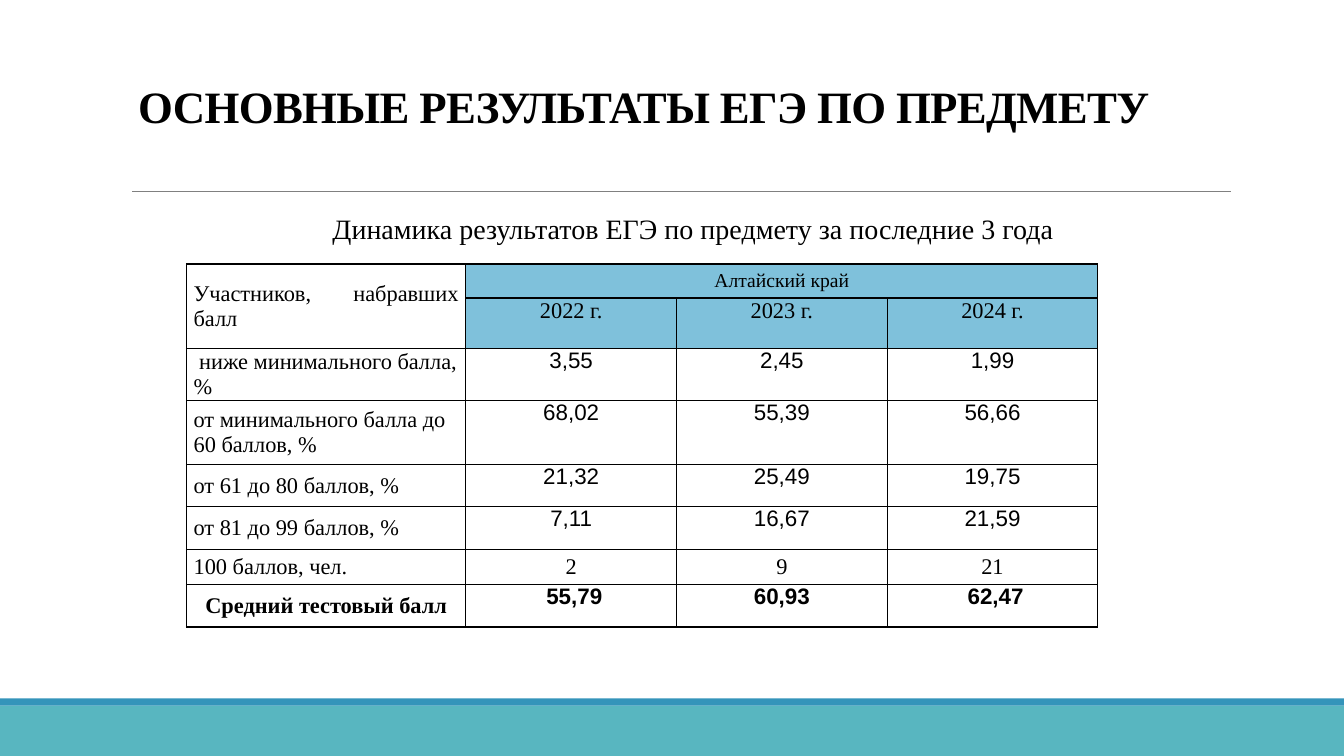
from dataclasses import dataclass

from lxml import etree
from pptx import Presentation
from pptx.dml.color import RGBColor
from pptx.enum.shapes import MSO_CONNECTOR, MSO_SHAPE
from pptx.enum.text import MSO_ANCHOR, MSO_AUTO_SIZE, PP_ALIGN
from pptx.oxml.ns import qn
from pptx.util import Cm, Pt

LEFT, MID, JUST = PP_ALIGN.LEFT, PP_ALIGN.CENTER, PP_ALIGN.JUSTIFY
TOP, CENTRE, BOTTOM = MSO_ANCHOR.TOP, MSO_ANCHOR.MIDDLE, MSO_ANCHOR.BOTTOM
RECT, LINE = MSO_SHAPE.RECTANGLE, MSO_CONNECTOR.STRAIGHT
SERIF, SANS = "Times New Roman", "Arial"
BLACK, WHITE, HEAD = "000000", "FFFFFF", "7FC1DB"
BLUE, TEAL, GREY = "3494BA", "58B6C0", "808080"
WIDE, HIGH = 33.87, 19.05


@dataclass
class Bar:
    top: float
    height: float
    fill: str


@dataclass
class Look:
    size: int = 16
    font: str = SERIF
    bold: bool = False
    align: PP_ALIGN = MID
    anchor: MSO_ANCHOR = CENTRE
    side: float = 0.18
    fill: str = ""


BARS = [Bar(17.78, 1.27, TEAL), Bar(17.6, 0.18, BLUE)]
COLS = [7.04, 5.31, 5.31, 5.31]
ROWS = [0.86, 1.27, 1.32, 1.6, 1.07, 1.07, 0.89, 1.07]
DATA = [
    ["Участников, набравших балл", "Алтайский край", "", ""],
    ["", "2022 г.", "2023 г.", "2024 г."],
    [" ниже минимального балла, %", "3,55", "2,45", "1,99"],
    ["от минимального балла до 60 баллов, %", "68,02", "55,39", "56,66"],
    ["от 61 до 80 баллов, %", "21,32", "25,49", "19,75"],
    ["от 81 до 99 баллов, %", "7,11", "16,67", "21,59"],
    ["100 баллов, чел.", "2", "9", "21"],
    ["Средний тестовый балл", " 55,79", "60,93", " 62,47"],
]
COUNT, MEAN = 6, 7


def rgb(code: str) -> RGBColor:
    return RGBColor.from_string(code)


def style(para, size: int, font: str = SERIF, bold: bool = False) -> None:
    for run in para.runs:
        run.font.size, run.font.name, run.font.bold = Pt(size), font, bold
        run.font.color.rgb = rgb(BLACK)


def place(shape, left: float, top: float, width: float, height: float) -> None:
    shape.left, shape.top = Cm(left), Cm(top)
    shape.width, shape.height = Cm(width), Cm(height)


def edge(cell) -> None:
    """Draw a thin black border on all four sides of a cell."""
    props = cell._tc.get_or_add_tcPr()
    for side in ("lnL", "lnR", "lnT", "lnB"):
        line = etree.SubElement(props, qn(f"a:{side}"), w=str(Pt(1)))
        fill = etree.SubElement(line, qn("a:solidFill"))
        etree.SubElement(fill, qn("a:srgbClr"), val=BLACK)


def look(row: int, col: int) -> Look:
    """Choose the format of a cell by its place in the table."""
    if col == 0:
        align = JUST if row == 0 else MID if row == MEAN else LEFT
        return Look(align=align, bold=row == MEAN)
    if row == 0:
        return Look(size=14, fill=HEAD)
    if row == 1:
        return Look(anchor=TOP, side=0, fill=HEAD)
    if row == COUNT:
        return Look(fill=WHITE)
    return Look(font=SANS, bold=row == MEAN, anchor=TOP, side=0, fill=WHITE)


def dress(cell, text: str, form: Look) -> None:
    cell.text_frame.text = text
    cell.margin_left = cell.margin_right = Cm(form.side)
    cell.margin_top = cell.margin_bottom = 0
    cell.vertical_anchor = form.anchor
    para = cell.text_frame.paragraphs[0]
    para.alignment = form.align
    style(para, form.size, form.font, form.bold)
    edge(cell)
    if form.fill:
        cell.fill.solid()
        cell.fill.fore_color.rgb = rgb(form.fill)
    else:
        cell.fill.background()


def frame(slide) -> None:
    """Draw the bottom bars and the rule under the title."""
    for bar in BARS:
        shape = slide.shapes.add_shape(RECT, 0, Cm(bar.top), Cm(WIDE), Cm(bar.height))
        shape.shadow.inherit = False
        shape.fill.solid()
        shape.fill.fore_color.rgb = rgb(bar.fill)
        shape.line.fill.background()
    rule = slide.shapes.add_connector(LINE, Cm(3.33), Cm(4.83), Cm(31.01), Cm(4.83))
    rule.line.color.rgb = rgb(GREY)
    rule.line.width = Pt(0.5)
    etree.SubElement(rule._element.spPr, qn("a:effectLst"))


def title(shape) -> None:
    place(shape, 3.23, 1.35, 28.4, 2.13)
    text = shape.text_frame
    text.text = "ОСНОВНЫЕ РЕЗУЛЬТАТЫ ЕГЭ ПО ПРЕДМЕТУ"
    text.auto_size, text.vertical_anchor = MSO_AUTO_SIZE.NONE, BOTTOM
    para = text.paragraphs[0]
    para.alignment, para.line_spacing = LEFT, 0.85
    style(para, 32, bold=True)
    para.runs[0].font._element.set("spc", "-50")


def body(shape) -> None:
    place(shape, 3.05, 5.31, 28.58, 11)
    text = shape.text_frame
    text.text = "Динамика результатов ЕГЭ по предмету за последние 3 года"
    text.auto_size, text.vertical_anchor = MSO_AUTO_SIZE.NONE, TOP
    text.margin_left = text.margin_right = 0
    para = text.paragraphs[0]
    para.alignment, para.line_spacing = MID, 0.9
    para.space_before, para.space_after = Pt(12), Pt(2)
    style(para, 20)
    props = para._p.get_or_add_pPr()
    props.set("marL", str(Cm(0.25)))
    props.set("indent", str(Cm(-0.25)))
    tint = etree.SubElement(props, qn("a:buClr"))
    etree.SubElement(tint, qn("a:srgbClr"), val=BLUE)
    etree.SubElement(props, qn("a:buChar"), char=" ")


def table(slide) -> None:
    grid = slide.shapes.add_table(
        len(ROWS), len(COLS), Cm(4.7), Cm(6.65), Cm(sum(COLS)), Cm(sum(ROWS))
    ).table
    grid.first_row = grid.horz_banding = False
    for col, width in zip(grid.columns, COLS):
        col.width = Cm(width)
    for row, height in zip(grid.rows, ROWS):
        row.height = Cm(height)
    for row, texts in enumerate(DATA):
        for col, text in enumerate(texts):
            dress(grid.cell(row, col), text, look(row, col))
    grid.cell(0, 0).merge(grid.cell(1, 0))
    grid.cell(0, 1).merge(grid.cell(0, 3))


def main() -> None:
    deck = Presentation()
    deck.slide_width, deck.slide_height = Cm(WIDE), Cm(HIGH)
    slide = deck.slides.add_slide(deck.slide_layouts[1])
    frame(slide)
    title(slide.shapes.title)
    body(slide.placeholders[1])
    table(slide)
    deck.save("out.pptx")


if __name__ == "__main__":
    main()
